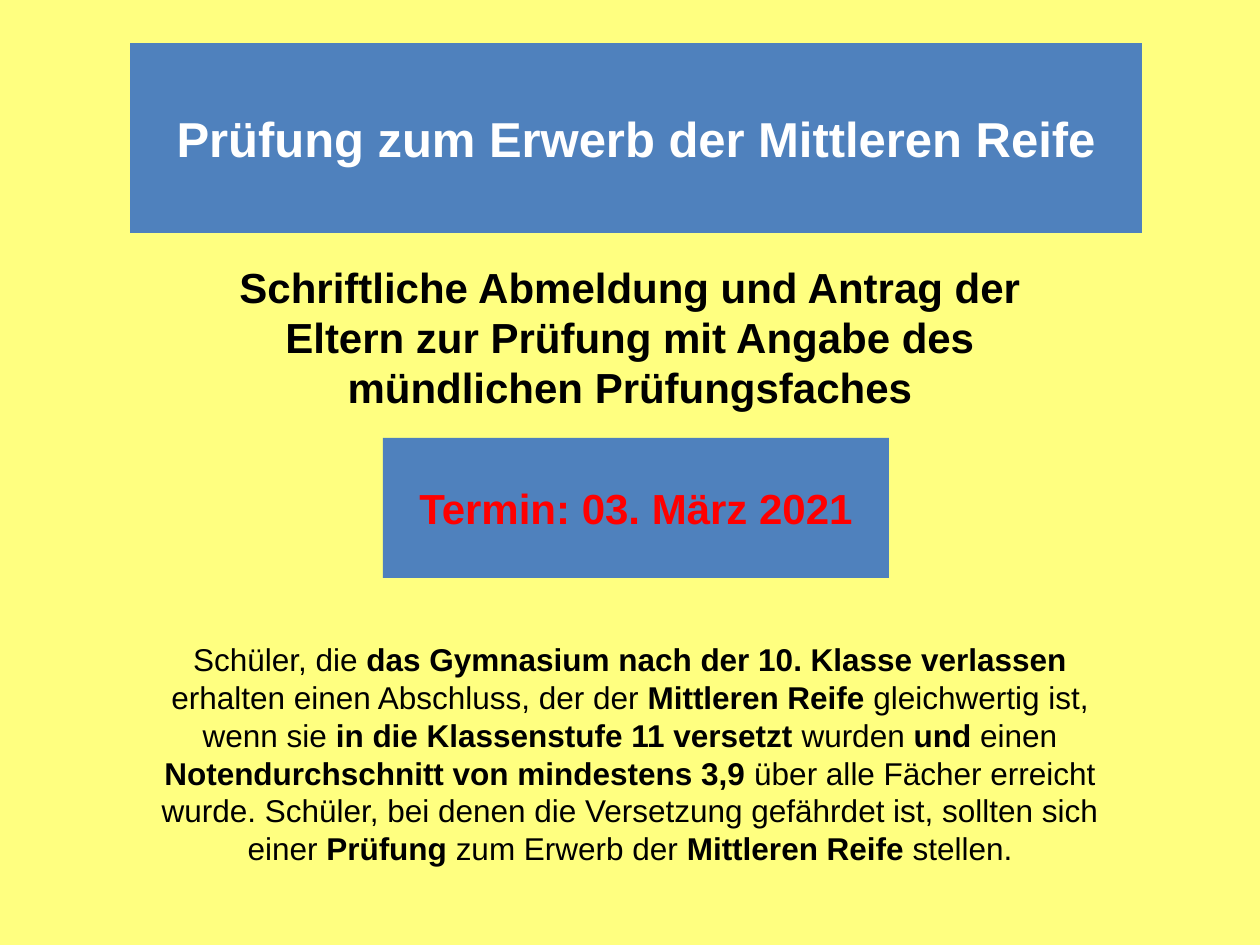
from pptx import Presentation
from pptx.dml.color import RGBColor
from pptx.enum.shapes import MSO_SHAPE
from pptx.enum.text import MSO_ANCHOR, PP_ALIGN
from pptx.util import Pt

PX = 914400 // 126  # EMU per px
COLORS = {
    "background": "FFFF80",
    "box": "4F81BD",
    "title": "FFFFFF",
    "deadline": "FF0000",
    "text": "000000",
}


def rgb(name):
    return RGBColor.from_string(COLORS[name])


def write(shape, text, size, color="text", bold=False, anchor=MSO_ANCHOR.TOP):
    """Fill a shape with centred text; each * switches bold on or off."""
    frame = shape.text_frame
    frame.word_wrap = True
    frame.vertical_anchor = anchor
    paragraph = frame.paragraphs[0]
    paragraph.alignment = PP_ALIGN.CENTER
    for i, part in enumerate(text.split("*")):
        run = paragraph.add_run()
        run.text = part
        run.font.name = "Arial"
        run.font.size = Pt(size)
        run.font.bold = bold or i % 2 == 1
        run.font.color.rgb = rgb(color)


prs = Presentation()
prs.slide_width, prs.slide_height = 1260 * PX, 945 * PX
slide = prs.slides.add_slide(prs.slide_layouts[5])
slide.background.fill.solid()
slide.background.fill.fore_color.rgb = rgb("background")

# Title
title = slide.shapes.title
title.left, title.top, title.width, title.height = (
    n * PX for n in (130, 43, 1012, 190))
title.fill.solid()
title.fill.fore_color.rgb = rgb("box")
write(title, "Prüfung zum Erwerb der Mittleren Reife", 28, color="title",
      bold=True, anchor=MSO_ANCHOR.MIDDLE)

# Application to be handed in
application = slide.shapes.add_textbox(169 * PX, 255 * PX, 922 * PX, 165 * PX)
write(application, "Schriftliche Abmeldung und Antrag der Eltern zur Prüfung "
      "mit Angabe des mündlichen Prüfungsfaches", 24, bold=True)

# Deadline
deadline = slide.shapes.add_shape(
    MSO_SHAPE.RECTANGLE, 383 * PX, 438 * PX, 506 * PX, 140 * PX)
deadline.shadow.inherit = False
deadline.fill.solid()
deadline.fill.fore_color.rgb = rgb("box")
deadline.line.fill.background()
write(deadline, "Termin: 03. März 2021", 24, color="deadline", bold=True,
      anchor=MSO_ANCHOR.MIDDLE)

# Conditions
conditions = slide.shapes.add_textbox(129 * PX, 634 * PX, 1002 * PX, 242 * PX)
write(conditions,
      "Schüler, die *das Gymnasium nach der 10. Klasse verlassen *erhalten "
      "einen Abschluss, der der *Mittleren Reife* gleichwertig ist, wenn sie "
      "*in die Klassenstufe 11 versetzt* wurden *und* einen "
      "*Notendurchschnitt von mindestens 3,9* über alle Fächer erreicht "
      "wurde. Schüler, bei denen die Versetzung gefährdet ist, sollten sich "
      "einer *Prüfung* zum Erwerb der *Mittleren Reife *stellen.", 18)

prs.save("out.pptx")
